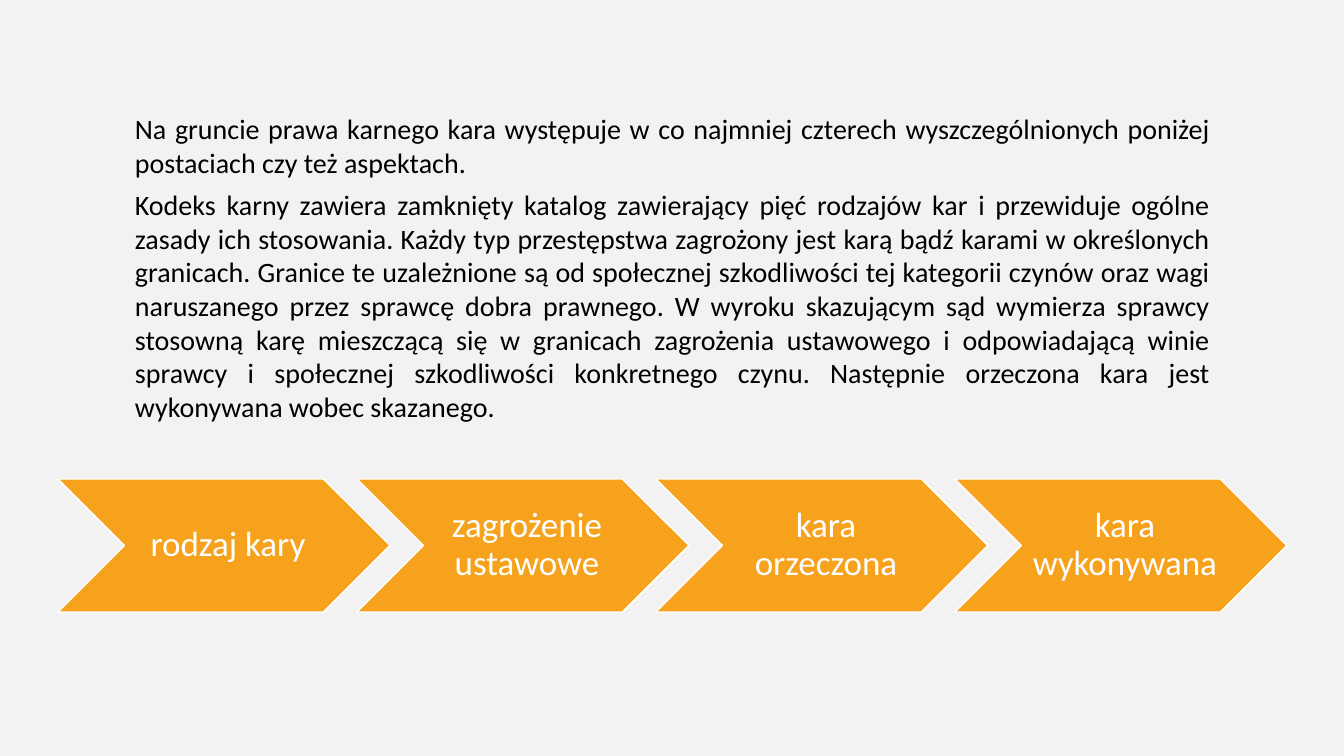
from pptx import Presentation
from pptx.dml.color import RGBColor
from pptx.enum.shapes import MSO_SHAPE
from pptx.enum.text import MSO_ANCHOR, MSO_AUTO_SIZE, PP_ALIGN
from pptx.util import Emu, Pt

PX = 914400 / 100.8
COLORS = {"background": "F2F2F2", "chevron": "F6A21D", "white": "FFFFFF", "text": "000000"}


def px(length):
    return Emu(round(length * PX))


def add_run(paragraph, text, size, color):
    run = paragraph.add_run()
    run.text = text
    run.font.name = "Calibri"
    run.font.size = Pt(size)
    run.font.color.rgb = RGBColor.from_string(COLORS[color])


presentation = Presentation()
presentation.slide_width, presentation.slide_height = px(1344), px(756)
slide = presentation.slides.add_slide(presentation.slide_layouts[6])
slide.background.fill.solid()
slide.background.fill.fore_color.rgb = RGBColor.from_string(COLORS["background"])

# Introductory text
intro = [
    "Na gruncie prawa karnego kara występuje w co najmniej czterech wyszczególnionych "
    "poniżej postaciach czy też aspektach.",
    "Kodeks karny zawiera zamknięty katalog zawierający pięć rodzajów kar i przewiduje "
    "ogólne zasady ich stosowania. Każdy typ przestępstwa zagrożony jest karą bądź karami "
    "w określonych granicach. Granice te uzależnione są od społecznej szkodliwości tej "
    "kategorii czynów oraz wagi naruszanego przez sprawcę dobra prawnego. W wyroku "
    "skazującym sąd wymierza sprawcy stosowną karę mieszczącą się w granicach zagrożenia "
    "ustawowego i odpowiadającą winie sprawcy i społecznej szkodliwości konkretnego czynu. "
    "Następnie orzeczona kara jest wykonywana wobec skazanego.",
]
text_frame = slide.shapes.add_textbox(px(125), px(107), px(1095), px(324)).text_frame
text_frame.word_wrap = True
text_frame.auto_size = MSO_AUTO_SIZE.SHAPE_TO_FIT_TEXT
for index, text in enumerate(intro):
    paragraph = text_frame.paragraphs[0] if index == 0 else text_frame.add_paragraph()
    paragraph.alignment = PP_ALIGN.JUSTIFY
    if index == 0:
        paragraph.space_after = Pt(6)
    add_run(paragraph, text, 20, "text")

# Chevron process
LEFT, TOP, WIDTH, HEIGHT, PITCH = 58, 479, 332, 133, 299
stages = ["rodzaj kary", "zagrożenie ustawowe", "kara orzeczona", "kara wykonywana"]
for index, stage in enumerate(stages):
    chevron = slide.shapes.add_shape(
        MSO_SHAPE.CHEVRON, px(LEFT + index * PITCH), px(TOP), px(WIDTH), px(HEIGHT))
    chevron.shadow.inherit = False
    chevron.fill.solid()
    chevron.fill.fore_color.rgb = RGBColor.from_string(COLORS["chevron"])
    chevron.line.color.rgb = RGBColor.from_string(COLORS["white"])
    chevron.line.width = Pt(1)
    text_frame = chevron.text_frame
    text_frame.word_wrap = True
    text_frame.vertical_anchor = MSO_ANCHOR.MIDDLE
    text_frame.margin_left, text_frame.margin_right = px(11), px(3)
    text_frame.margin_top = text_frame.margin_bottom = px(4)
    paragraph = text_frame.paragraphs[0]
    paragraph.alignment = PP_ALIGN.CENTER
    paragraph.line_spacing = 0.9
    add_run(paragraph, stage, 25, "white")

presentation.save("out.pptx")
